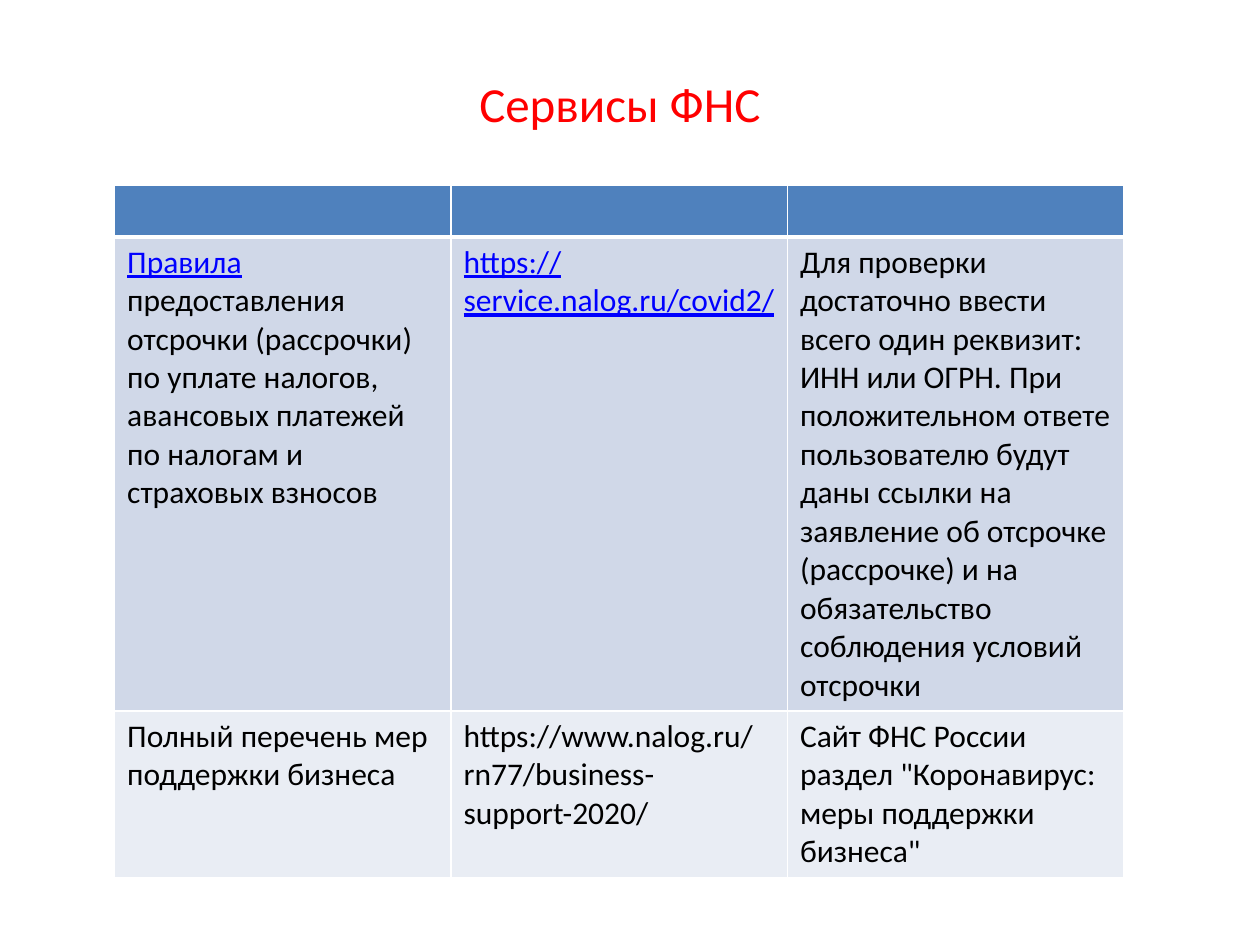
import dataclasses

import lxml.etree
import pptx
import pptx.dml.color
import pptx.enum.text
import pptx.oxml.ns
import pptx.util

Inches = pptx.util.Inches
Pt = pptx.util.Pt

COLORS = {
    "title": "FF0000",
    "header": "4F81BD",
    "band_dark": "D0D8E8",
    "band_light": "E9EDF4",
    "border": "FFFFFF",
    "text": "000000",
    "link": "0000FF",
}
FONT = "Calibri"


@dataclasses.dataclass(frozen=True)
class Span:
    text: str
    is_link: bool = False


@dataclasses.dataclass(frozen=True)
class ServiceRow:
    height: float
    fill: str
    cells: tuple[tuple[Span, ...], ...]
    bottom_border: float = 1


ROWS = (
    ServiceRow(0.41, "header", ((), (), ()), bottom_border=3),
    ServiceRow(3.76, "band_dark", (
        (
            Span("Правила", is_link=True),
            Span(" предоставления отсрочки (рассрочки) по уплате налогов, "
                 "авансовых платежей по налогам и страховых взносов"),
        ),
        (Span("https://service.nalog.ru/covid2/", is_link=True),),
        (Span("Для проверки достаточно ввести всего один реквизит: ИНН или ОГРН. "
              "При положительном ответе пользователю будут даны ссылки на "
              "заявление об отсрочке (рассрочке) и на обязательство "
              "соблюдения условий отсрочки"),),
    )),
    ServiceRow(1.32, "band_light", (
        (Span("Полный перечень мер поддержки бизнеса"),),
        (Span("https://www.nalog.ru/rn77/business-support-2020/"),),
        (Span('Сайт ФНС России раздел "Коронавирус: меры поддержки бизнеса"'),),
    )),
)
COLUMN_WIDTH = 2.67


def rgb(key: str) -> pptx.dml.color.RGBColor:
    return pptx.dml.color.RGBColor.from_string(COLORS[key])


def style_font(font, size: float, color: str) -> None:
    font.name = FONT
    font.size = Pt(size)
    font.color.rgb = rgb(color)


def set_borders(cell, top: float, bottom: float) -> None:
    """Draw all four cell edges; the sides are 1 pt wide."""
    qn = pptx.oxml.ns.qn
    properties = cell._tc.get_or_add_tcPr()
    edges = {"lnL": 1, "lnR": 1, "lnT": top, "lnB": bottom}
    for position, (edge, width) in enumerate(edges.items()):
        line = lxml.etree.Element(qn(f"a:{edge}"), w=str(Pt(width)))
        fill = lxml.etree.SubElement(line, qn("a:solidFill"))
        lxml.etree.SubElement(fill, qn("a:srgbClr"), val=COLORS["border"])
        properties.insert(position, line)


def fill_cell(cell, spans: tuple[Span, ...], fill: str) -> None:
    cell.fill.solid()
    cell.fill.fore_color.rgb = rgb(fill)
    paragraph = cell.text_frame.paragraphs[0]
    for span in spans:
        run = paragraph.add_run()
        run.text = span.text
        style_font(run.font, 18, "link" if span.is_link else "text")
        run.font.underline = span.is_link


def add_title(slide) -> None:
    title = slide.shapes.title
    title.left, title.top = Inches(0.91), Inches(0.21)
    title.width, title.height = Inches(8.02), Inches(1.21)
    title.text_frame.text = "Сервисы ФНС"
    title.text_frame.vertical_anchor = pptx.enum.text.MSO_ANCHOR.MIDDLE
    paragraph = title.text_frame.paragraphs[0]
    paragraph.alignment = pptx.enum.text.PP_ALIGN.CENTER
    style_font(paragraph.runs[0].font, 28, "title")


def add_services(slide, rows: tuple[ServiceRow, ...]) -> None:
    column_count = len(rows[0].cells)
    services = slide.shapes.add_table(
        len(rows), column_count, Inches(0.91), Inches(1.47),
        Inches(COLUMN_WIDTH * column_count), Inches(sum(row.height for row in rows)),
    ).table
    for column in services.columns:
        column.width = Inches(COLUMN_WIDTH)
    top_border = 1
    for row_index, row in enumerate(rows):
        services.rows[row_index].height = Inches(row.height)
        for column_index, spans in enumerate(row.cells):
            cell = services.cell(row_index, column_index)
            fill_cell(cell, spans, row.fill)
            set_borders(cell, top_border, row.bottom_border)
        top_border = row.bottom_border


def main() -> None:
    presentation = pptx.Presentation()
    presentation.slide_width, presentation.slide_height = Inches(10), Inches(7.5)
    slide = presentation.slides.add_slide(presentation.slide_layouts[5])
    add_services(slide, ROWS)
    add_title(slide)
    presentation.save("out.pptx")


if __name__ == "__main__":
    main()
